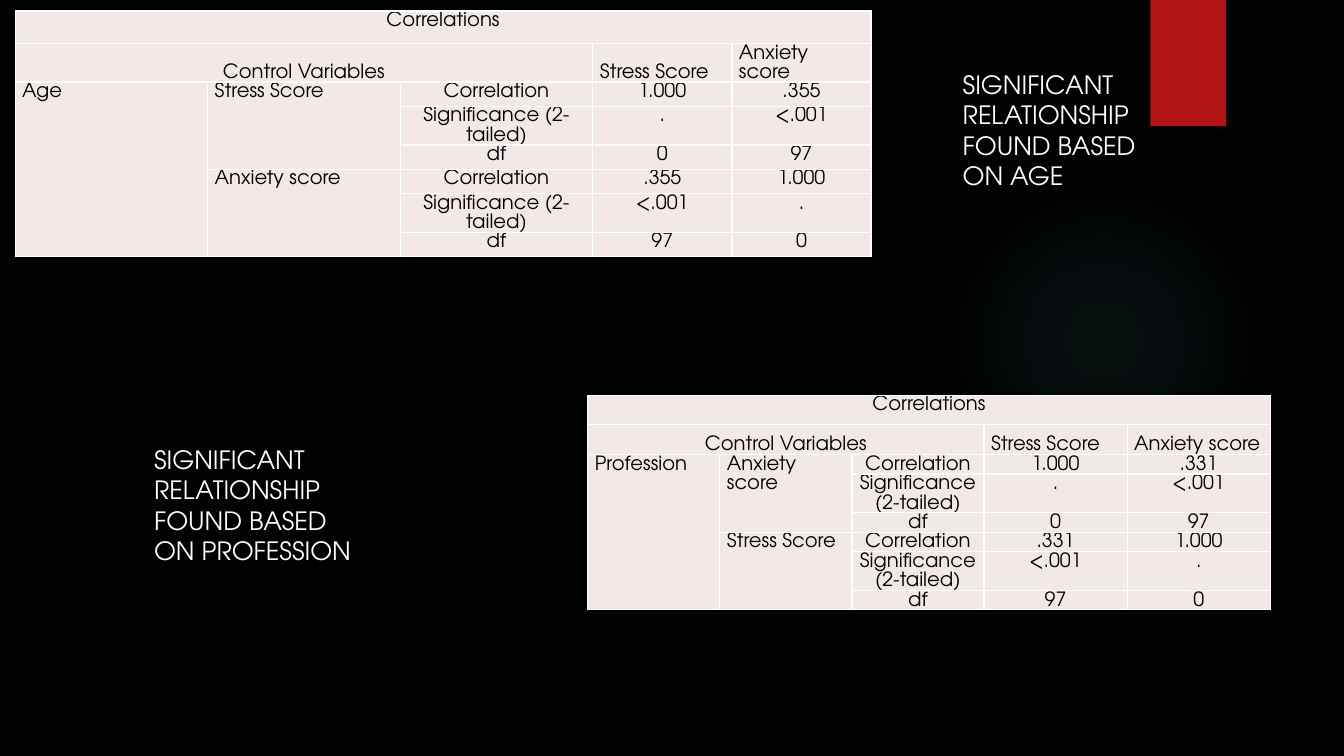
"""Build a slide with two partial-correlation tables and their findings."""
from pptx import Presentation
from pptx.dml.color import RGBColor
from pptx.enum.shapes import MSO_SHAPE
from pptx.enum.text import MSO_ANCHOR, MSO_AUTO_SIZE, PP_ALIGN
from pptx.oxml import parse_xml
from pptx.util import Inches, Pt

OVAL, RECT = MSO_SHAPE.OVAL, MSO_SHAPE.RECTANGLE
TOP, BOTTOM = MSO_ANCHOR.TOP, MSO_ANCHOR.BOTTOM
LEFT, CENTER = PP_ALIGN.LEFT, PP_ALIGN.CENTER
FIT_SHAPE = MSO_AUTO_SIZE.SHAPE_TO_FIT_TEXT
FONT = "TeX Gyre Adventor"
NS = 'xmlns:a="http://schemas.openxmlformats.org/drawingml/2006/main"'
COLORS = {"black": "000000", "white": "FFFFFF", "red": "B01513",
          "cell": "F2E8E7", "glow": "50B9C1"}


def set_font(p, size, color):
    p.font.name = FONT
    p.font.size = Pt(size)
    p.font.color.rgb = RGBColor.from_string(COLORS[color])


def add_correlations(s, box, cols, rows, control, scores, r_value):
    table = s.shapes.add_table(8, 5, *map(Inches, box)).table
    table.first_row = table.horz_banding = False
    for column, width in zip(table.columns, cols):
        column.width = Inches(width)
    for row, height in zip(table.rows, rows):
        row.height = Inches(height)

    pairs = [("1.000", r_value), (".", "<.001"), ("0", "97")]
    labels = ["Correlation", "Significance (2-tailed)", "df"]
    grid = [["Correlations", "", "", "", ""],
            ["Control Variables", "", "", "Stress Score", "Anxiety score"]]
    for i in range(6):
        own, other = pairs[i % 3] if i < 3 else pairs[i % 3][::-1]
        grid.append([control if i == 0 else "", scores[i // 3] if i % 3 == 0 else "",
                     labels[i % 3], own, other])

    for i, texts in enumerate(grid):
        for j, text in enumerate(texts):
            cell = table.cell(i, j)
            cell.margin_left = cell.margin_right = Inches(0.07)
            cell.margin_top = cell.margin_bottom = 0
            cell.vertical_anchor = BOTTOM if i == 1 else TOP
            cell.fill.solid()
            cell.fill.fore_color.rgb = RGBColor.from_string(COLORS["cell"])
            for n, side in enumerate("LRTB"):
                cell._tc.tcPr.insert(n, parse_xml(
                    f'<a:ln{side} {NS} w="12700"><a:solidFill><a:srgbClr '
                    f'val="{COLORS["white"]}"/></a:solidFill></a:ln{side}>'))
            p = cell.text_frame.paragraphs[0]
            p.text = text
            left = (i == 1 and j > 2) or (i > 1 and j < 2)
            p.alignment = LEFT if left else CENTER
            p.line_spacing = 1.07
            p.space_after = Pt(8)
            set_font(p, 14, "black")

    for first, last in [((0, 0), (0, 4)), ((1, 0), (1, 2)), ((2, 0), (7, 0)),
                        ((2, 1), (4, 1)), ((5, 1), (7, 1))]:
        table.cell(*first).merge(table.cell(*last))


prs = Presentation()
prs.slide_width, prs.slide_height = Inches(13.33), Inches(7.5)
s = prs.slides.add_slide(prs.slide_layouts[6])
s.background.fill.solid()
s.background.fill.fore_color.rgb = RGBColor.from_string(COLORS["black"])

glow = s.shapes.add_shape(OVAL, Inches(9.41), Inches(1.83), Inches(3.08), Inches(3.08))
glow.shadow.inherit = False
glow.line.fill.background()
stops = "".join(
    f'<a:gs pos="{pos}000"><a:srgbClr val="{COLORS["glow"]}">'
    f'<a:alpha val="{alpha}000"/></a:srgbClr></a:gs>'
    for pos, alpha in [(0, 7), (36, 6), (69, 0)])
glow._element.spPr.insert(2, parse_xml(
    f'<a:gradFill {NS}><a:gsLst>{stops}</a:gsLst><a:path path="circle">'
    '<a:fillToRect l="50000" t="50000" r="50000" b="50000"/></a:path></a:gradFill>'))

tab = s.shapes.add_shape(RECT, Inches(11.41), 0, Inches(0.75), Inches(1.25))
tab.fill.solid()
tab.fill.fore_color.rgb = RGBColor.from_string(COLORS["red"])
tab.line.fill.background()
tab.shadow.inherit = False
tab._element.spPr[-1].append(parse_xml(
    f'<a:outerShdw {NS} blurRad="38100" dist="25400" dir="5400000"><a:srgbClr '
    f'val="{COLORS["black"]}"><a:alpha val="45000"/></a:srgbClr></a:outerShdw>'))

add_correlations(s, (0.15, 0.11, 8.5, 2.74), [1.91] * 3 + [1.38] * 2,
                 [0.32, 0.33] + [0.24] * 6, "Age",
                 ["Stress Score", "Anxiety score"], ".355")
add_correlations(s, (5.83, 3.92, 6.78, 2.51), [1.31] * 3 + [1.42] * 2,
                 [0.29, 0.3] + [0] * 6, "Profession",
                 ["Anxiety score", "Stress Score"], ".331")

for x, y, basis in [(1.43, 4.36, "PROFESSION"), (9.45, 0.64, "AGE")]:
    tf = s.shapes.add_textbox(Inches(x), Inches(y), Inches(2.28), Inches(1.31)).text_frame
    tf.word_wrap = True
    tf.auto_size = FIT_SHAPE
    tf.text = f"SIGNIFICANT RELATIONSHIP\nFOUND BASED ON {basis}"
    for p in tf.paragraphs:
        set_font(p, 18, "white")

prs.save("out.pptx")
